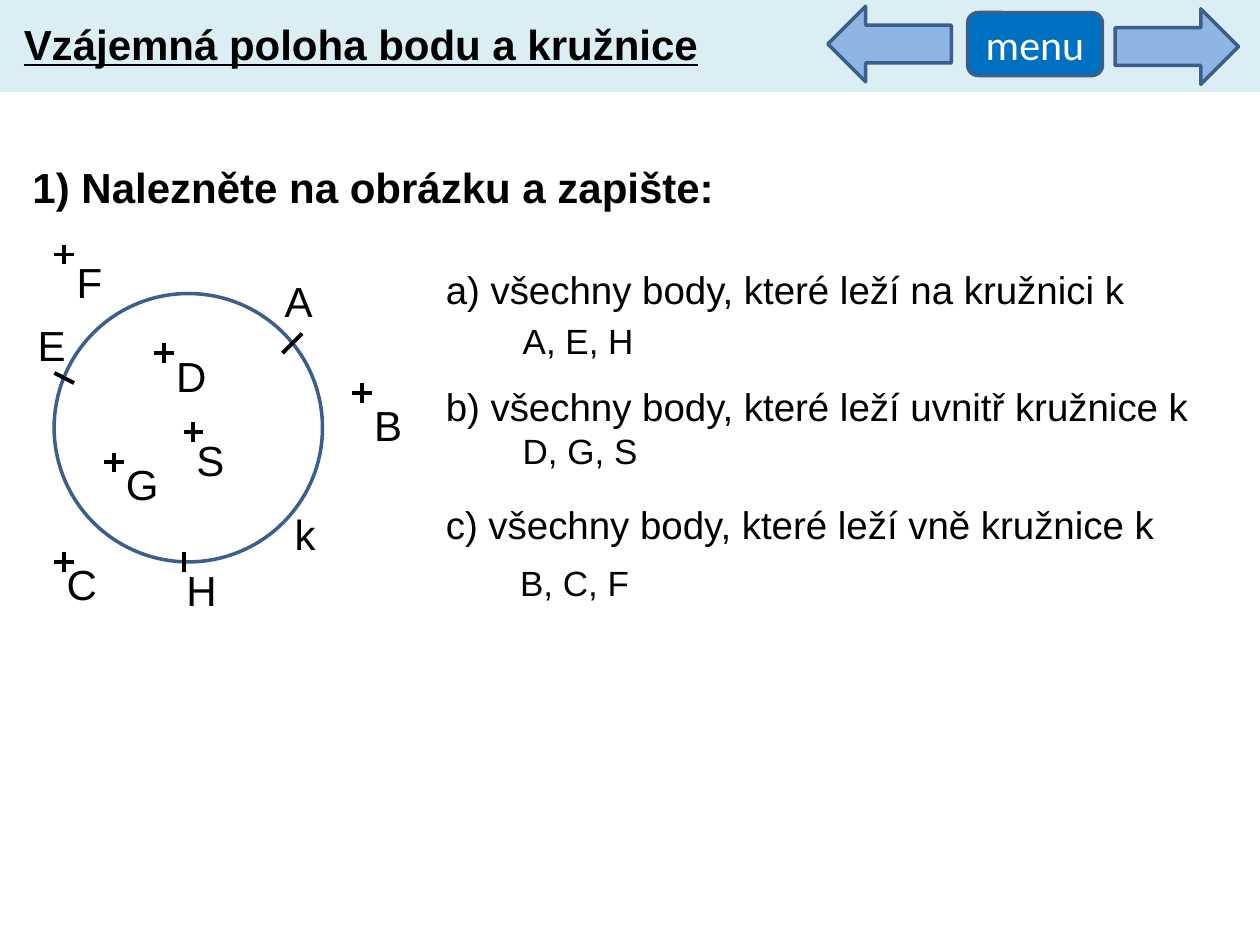
from pptx import Presentation
from pptx.dml.color import RGBColor
from pptx.enum.shapes import MSO_CONNECTOR, MSO_SHAPE
from pptx.enum.text import MSO_ANCHOR, PP_ALIGN
from pptx.oxml.ns import qn
from pptx.util import Inches, Pt
from lxml.etree import SubElement

HEX = {"ink": "000000", "white": "FFFFFF", "edge": "3A5F8C",
       "band": "DBEEF4", "arrow": "8EB4E3", "menu": "0070C0"}
COLS, ROWS = 100, 75  # grid over the 10 x 7.5 inch slide


def color(name):
    return RGBColor.from_string(HEX[name])


def write(frame, *lines, size=24, font="Arial", ink="ink", bold=False,
          under=False, align=PP_ALIGN.LEFT, lead=None, gap=0):
    for i, line in enumerate(lines):
        para = frame.add_paragraph() if i else frame.paragraphs[0]
        para.alignment = align
        if lead:
            para.line_spacing = lead
        if i:
            para.space_before = Pt(gap)
        run = para.add_run()
        run.text = line
        run.font.size, run.font.name = Pt(size), font
        run.font.bold, run.font.underline = bold, under
        run.font.color.rgb = color(ink)


class Deck:
    def __init__(self):
        self.prs = Presentation()
        self.prs.slide_width, self.prs.slide_height = Inches(10), Inches(7.5)
        self.slide = self.prs.slides.add_slide(self.prs.slide_layouts[6])
        self.items = self.slide.shapes

    def x(self, col):
        return round(self.prs.slide_width * col / COLS)

    def y(self, row):
        return round(self.prs.slide_height * row / ROWS)

    def area(self, col, row, wide, high):
        return self.x(col), self.y(row), self.x(wide), self.y(high)

    def shape(self, kind, *area, fill=None, edge="edge"):
        item = self.items.add_shape(kind, *self.area(*area))
        item.shadow.inherit = False
        if fill:
            item.fill.solid()
            item.fill.fore_color.rgb = color(fill)
        else:
            item.fill.background()
        if edge:
            item.line.color.rgb = color(edge)
            item.line.width = Pt(2)
        else:
            item.line.fill.background()
        return item

    def text(self, area, *lines, wrap=True, **style):
        frame = self.items.add_textbox(*self.area(*area)).text_frame
        frame.word_wrap = wrap
        write(frame, *lines, **style)

    def tick(self, col, row, dx, dy):
        """Draw a stroke centred on a point, reaching (dx, dy) each way."""
        line = self.items.add_connector(
            MSO_CONNECTOR.STRAIGHT, self.x(col - dx), self.y(row - dy),
            self.x(col + dx), self.y(row + dy))
        line.line.color.rgb = color("ink")
        line.line.width = Pt(2.25)
        SubElement(line._element.spPr, qn("a:effectLst"))

    def point(self, name, spot, label, strokes):
        for reach in strokes:
            self.tick(*spot, *reach)
        self.text((*label, 5.5, 5.1), name)


ARM = 0.78
UP, FLAT = (0, ARM), (ARM, 0)
CROSS = (UP, FLAT)

# Name, place of the point, corner of its label, strokes
POINTS = [
    ("S", (15.35, 34.3), (14.6, 34), CROSS),
    ("A", (23.2, 27.25), (21.6, 21.4), [(ARM, -ARM)]),
    ("D", (13, 28), (13, 27.3), CROSS),
    ("C", (5.1, 44.6), (4.3, 43.8), CROSS),
    ("E", (5.1, 30), (2, 24.9), [(ARM, 0.4)]),
    ("G", (9.05, 36.7), (9, 35.9), CROSS),
    ("F", (5.1, 20.2), (5.1, 19.9), CROSS),
    ("B", (28.75, 31.2), (28.7, 31.2), CROSS),
    ("H", (14.6, 44.6), (13.8, 44.3), [UP]),
]
ASKS = ["a) všechny body, které leží na kružnici k",
        "b) všechny body, které leží uvnitř kružnice k",
        "c) všechny body, které leží vně kružnice k"]
REPLIES = [("A, E, H", 40.5, 24.9), ("D, G, S", 40.5, 33.6),
           ("B, C, F", 40.3, 44.1)]


def main():
    deck = Deck()

    # Circle and its points
    deck.shape(MSO_SHAPE.OVAL, 4.3, 23.3, 21.3, 21.3)
    deck.text((22.4, 39.9, 5.5, 5.1), "k")
    for point in POINTS:
        deck.point(*point)

    # Task, questions and answers
    deck.text((1.6, 12.3, 56.6, 5), "1) Nalezněte na obrázku a zapište:",
              wrap=False, bold=True)
    deck.text((34.4, 19.5, 65, 27), *ASKS, size=22, lead=1.3, gap=32.8)
    for reply, col, row in REPLIES:
        deck.text((col, row, 23.7, 4.4), reply, size=20)

    # Header band, arrows and menu button
    deck.shape(MSO_SHAPE.RECTANGLE, 0, 0, COLS, 7.3, fill="band", edge=None)
    deck.shape(MSO_SHAPE.RIGHT_ARROW, 88.5, 0.7, 9.8, 6, fill="arrow")
    deck.shape(MSO_SHAPE.LEFT_ARROW, 65.7, 0.5, 9.8, 6, fill="arrow")
    deck.text((0.9, 1, 93.2, 5), "Vzájemná poloha bodu a kružnice",
              bold=True, under=True)
    menu = deck.shape(MSO_SHAPE.ROUNDED_RECTANGLE, 76.8, 1, 10.7, 5,
                      fill="menu").text_frame
    menu.vertical_anchor = MSO_ANCHOR.MIDDLE
    write(menu, "menu", font="Calibri", ink="white", align=PP_ALIGN.CENTER)

    deck.prs.save("out.pptx")


if __name__ == "__main__":
    main()
